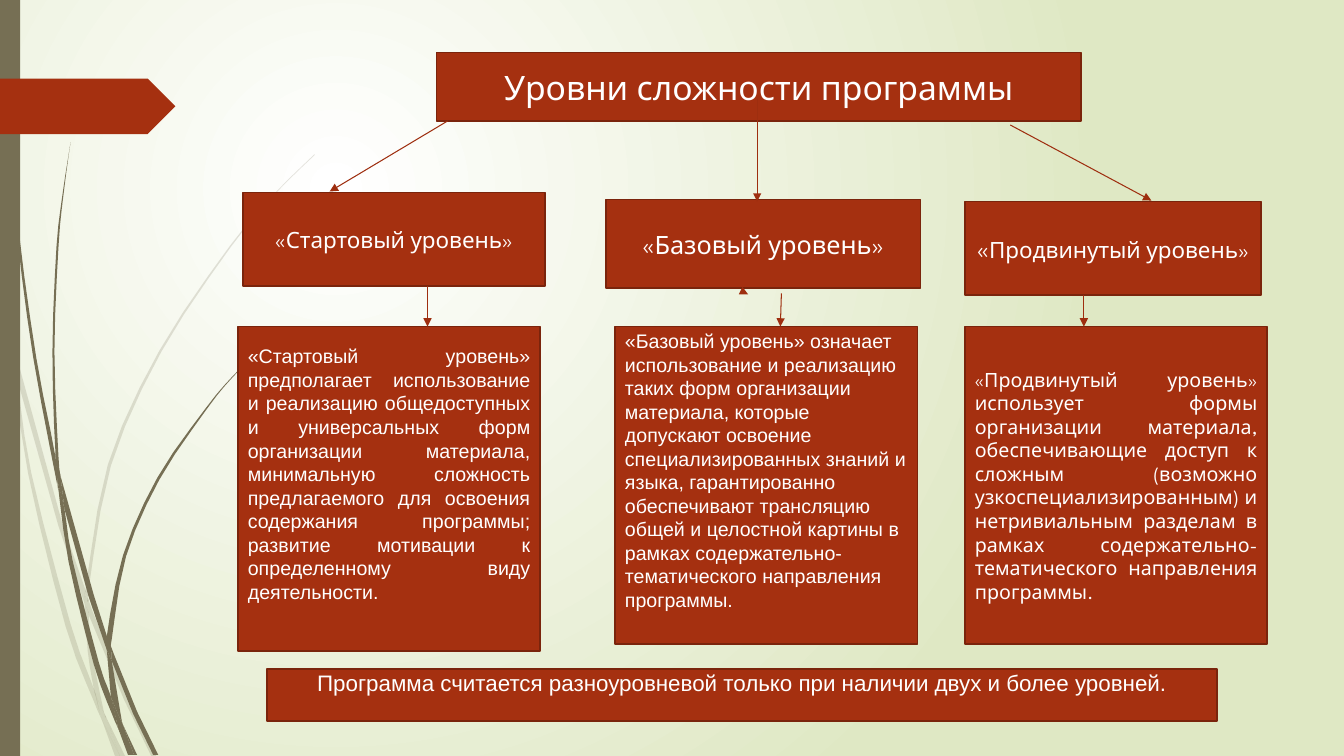
"""Builds a slide on the difficulty levels of a programme."""
from dataclasses import dataclass
from typing import Optional

from lxml.etree import SubElement
from pptx import Presentation
from pptx.dml.color import RGBColor
from pptx.enum.shapes import MSO_CONNECTOR, MSO_SHAPE
from pptx.enum.text import MSO_ANCHOR, PP_ALIGN
from pptx.oxml.ns import qn
from pptx.util import Inches, Pt

COLORS = {"rust": "A53010", "edge": "7A240C", "arrow": "9E2E0F", "olive": "766F54",
          "white": "FFFFFF", "meadow": "DFE8C4"}
DISPLAY, BODY = "League Spartan", "Arial"
UNITS_PER_INCH = 1000
Point = tuple[float, float]


@dataclass
class Panel:
    left: float
    top: float
    width: float
    height: float
    text: str
    size: int
    font: str = DISPLAY
    align: PP_ALIGN = PP_ALIGN.CENTER
    anchor: MSO_ANCHOR = MSO_ANCHOR.MIDDLE
    margin_top: float = 0.05
    margin_bottom: float = 0.05
    quote_size: Optional[int] = None


@dataclass
class Arrow:
    start: Point
    end: Point


@dataclass
class Blade:
    left_edge: list[Point]
    right_edge: list[Point]


FAINT_BLADES = [
    Blade([(0, 2.82), (0, 2.99), (0.1, 3.44), (0.11, 3.5)], [(0, 2.82), (0.09, 3.22), (0.11, 3.5)]),
    Blade([(0.14, 3.45), (0.17, 3.76), (0.58, 5.22), (0.84, 5.99)],
          [(0.14, 3.45), (0.62, 5.2), (0.85, 5.86), (0.84, 5.99)]),
    Blade([(0.88, 5.96), (0.88, 6.1), (1.23, 6.94), (1.5, 7.5)],
          [(0.88, 5.96), (0.92, 6.07), (1.27, 6.92), (1.55, 7.5)]),
    Blade([(1.05, 7.11), (1.19, 7.5)], [(1.05, 7.11), (1.24, 7.5)]),
    Blade([(0.11, 3.5), (0.28, 4.7), (0.65, 6.21), (0.92, 6.93), (1.01, 7.14)],
          [(0.11, 3.5), (0.17, 3.76), (0.31, 4.69), (0.7, 6.19), (0.93, 6.83), (0.99, 7.07), (1.01, 7.14)]),
    Blade([(0.84, 5.99), (0.87, 6.46), (0.93, 6.83), (0.96, 6.92), (1.05, 7.11)],
          [(0.84, 5.99), (0.88, 6.08), (0.88, 6.1), (0.91, 6.46), (1.03, 7.06), (1.05, 7.11)]),
    Blade([(3.12, 1.53), (2.89, 1.75), (2.68, 1.97), (2.28, 2.44), (1.58, 3.48), (1.07, 4.61), (0.85, 5.84),
           (0.85, 5.86), (0.88, 5.96)],
          [(3.12, 1.54), (2.9, 1.75), (2.68, 1.98), (2.29, 2.45), (1.6, 3.49), (1.1, 4.62), (0.88, 5.84),
           (0.88, 5.96)]),
    Blade([(1.01, 7.14), (1.14, 7.5)], [(1.01, 7.14), (1.19, 7.5)]),
    Blade([(0.85, 5.86), (0.84, 5.99), (0.88, 6.08)], [(0.85, 5.86), (0.88, 5.96), (0.88, 6.1)]),
    Blade([(0.93, 6.83), (0.99, 7.07), (1.01, 7.14), (1.19, 7.5)],
          [(0.93, 6.83), (0.96, 6.92), (1.05, 7.11), (1.19, 7.5)]),
]
SOLID_BLADES = [
    Blade([(0.03, 0), (0.04, 0.48), (0.07, 1.1), (0.17, 2.33), (0.33, 3.55), (0.56, 4.77), (0.57, 4.81)],
          [(0.04, 0), (0.05, 0.48), (0.08, 1.09), (0.19, 2.32), (0.36, 3.55), (0.55, 4.53), (0.57, 4.81)]),
    Blade([(0.6, 4.72), (0.64, 5.05), (0.88, 5.92), (1.06, 6.45)],
          [(0.6, 4.72), (0.93, 5.9), (1.06, 6.31), (1.06, 6.45)]),
    Blade([(1.1, 6.41), (1.11, 6.56), (1.32, 7.08), (1.52, 7.49)],
          [(1.1, 6.41), (1.13, 6.49), (1.36, 7.06), (1.57, 7.49)]),
    Blade([(0.57, 4.77), (0.68, 5.57), (0.93, 6.59), (1.11, 7.08), (1.17, 7.22)],
          [(0.57, 4.77), (0.64, 5.05), (0.72, 5.56), (0.98, 6.57), (1.1, 6.91), (1.17, 7.22)]),
    Blade([(0.7, 1.41), (0.62, 1.93), (0.56, 2.45), (0.52, 3.49), (0.55, 4.49), (0.6, 4.72)],
          [(0.7, 1.41), (0.63, 1.93), (0.58, 2.45), (0.54, 3.49), (0.58, 4.53), (0.6, 4.72)]),
    Blade([(1.22, 7.19), (1.33, 7.49)], [(1.22, 7.19), (1.36, 7.49)]),
    Blade([(0.55, 4.49), (0.55, 4.53), (0.57, 4.77), (0.64, 5.05)], [(0.55, 4.49), (0.6, 4.72), (0.64, 5.05)]),
    Blade([(2.6, 3.44), (2.31, 3.73), (2.04, 4.05), (1.56, 4.74), (1.22, 5.51), (1.06, 6.31), (1.1, 6.41)],
          [(2.61, 3.44), (2.31, 3.74), (2.05, 4.06), (1.58, 4.76), (1.25, 5.52), (1.11, 6.33), (1.1, 6.41)]),
    Blade([(1.17, 7.22), (1.27, 7.49)], [(1.17, 7.22), (1.31, 7.49)]),
    Blade([(1.06, 6.45), (1.1, 6.91), (1.16, 7.06), (1.22, 7.19)],
          [(1.06, 6.45), (1.11, 6.56), (1.21, 7.16), (1.22, 7.19)]),
    Blade([(1.06, 6.31), (1.06, 6.45), (1.11, 6.56)], [(1.06, 6.31), (1.1, 6.41), (1.11, 6.56)]),
    Blade([(1.1, 6.91), (1.16, 7.17), (1.17, 7.22), (1.3, 7.49)],
          [(1.1, 6.91), (1.16, 7.06), (1.22, 7.19), (1.33, 7.49)]),
]
PANELS = [
    Panel(4.33, 0.52, 6.39, 0.68, "Уровни сложности программы", 24),
    Panel(2.41, 1.91, 3, 0.93, "«Стартовый уровень»", 16),
    Panel(6.01, 1.98, 3.12, 0.88, "«Базовый уровень»", 18),
    Panel(9.57, 2, 2.94, 0.93, "«Продвинутый уровень»", 16, quote_size=18),
    Panel(2.36, 3.24, 3, 3.22,
          "«Стартовый уровень» предполагает использование и реализацию общедоступных и "
          "универсальных форм организации материала, минимальную сложность предлагаемого для "
          "освоения содержания программы; развитие мотивации к определенному виду деятельности.",
          14, BODY, PP_ALIGN.JUSTIFY, margin_bottom=0.35),
    Panel(6.1, 3.24, 3, 3.15,
          "«Базовый уровень» означает использование и реализацию таких форм организации материала, "
          "которые допускают освоение специализированных знаний и языка, гарантированно обеспечивают "
          "трансляцию общей и целостной картины в рамках содержательно-тематического направления программы.",
          14, BODY, PP_ALIGN.LEFT, margin_bottom=0.35),
    Panel(9.57, 3.24, 3, 3.15,
          "«Продвинутый уровень» использует формы организации материала, обеспечивающие доступ к "
          "сложным (возможно узкоспециализированным) и нетривиальным разделам в рамках "
          "содержательно-тематического направления программы.", 14, align=PP_ALIGN.JUSTIFY),
    Panel(2.65, 6.64, 9.42, 0.51, "Программа считается разноуровневой только при наличии двух и более уровней.",
          16, BODY, anchor=MSO_ANCHOR.TOP, margin_top=0),
]
ARROWS = [
    Arrow((4.44, 1.2), (3.27, 1.9)), Arrow((7.51, 0.98), (7.51, 2)), Arrow((10.02, 1.24), (11.42, 1.99)),
    Arrow((4.24, 2.84), (4.24, 3.24)), Arrow((7.4, 2.91), (7.42, 2.92)),
    Arrow((10.75, 2.93), (10.75, 3.24)), Arrow((7.75, 2.91), (7.74, 3.24)),
]


def rgb(name: str) -> RGBColor:
    return RGBColor.from_string(COLORS[name])


def paint(shape, fill: str, edge: Optional[str] = None) -> None:
    shape.shadow.inherit = False
    shape.fill.solid()
    shape.fill.fore_color.rgb = rgb(fill)
    if edge:
        shape.line.color.rgb = rgb(edge)
        shape.line.width = Pt(1.25)
    else:
        shape.line.fill.background()


def smooth(knots: list[Point]) -> list[Point]:
    steps = 3 if len(knots) > 4 else 1
    padded = [knots[0], *knots, knots[-1]]
    curve = [tuple(b + ((c - a) * t + (2 * a - 5 * b + 4 * c - d) * t ** 2 + (3 * b - a - 3 * c + d) * t ** 3) / 2
                   for a, b, c, d in zip(*window))
             for window in zip(padded, padded[1:], padded[2:], padded[3:])
             for t in (step / steps for step in range(steps))]
    return curve + [knots[-1]]


def draw_blade(slide, blade: Blade, opacity: int) -> None:
    outline = [(x * UNITS_PER_INCH, y * UNITS_PER_INCH)
               for x, y in smooth(blade.left_edge) + smooth(blade.right_edge)[::-1]]
    builder = slide.shapes.build_freeform(*outline[0], scale=Inches(1) / UNITS_PER_INCH)
    builder.add_line_segments(outline[1:], close=True)
    leaf = builder.convert_to_shape()
    paint(leaf, "olive")
    if opacity < 100:
        SubElement(leaf._element.spPr.find(qn("a:solidFill"))[0], qn("a:alpha"), val=str(opacity * 1000))


def draw_panel(slide, panel: Panel) -> None:
    box = slide.shapes.add_shape(MSO_SHAPE.RECTANGLE, Inches(panel.left), Inches(panel.top),
                                 Inches(panel.width), Inches(panel.height))
    paint(box, "rust", "edge")
    frame = box.text_frame
    frame.word_wrap = True
    frame.vertical_anchor = panel.anchor
    frame.margin_top, frame.margin_bottom = Inches(panel.margin_top), Inches(panel.margin_bottom)
    paragraph = frame.paragraphs[0]
    paragraph.alignment = panel.align
    paragraph.text = panel.text
    if panel.quote_size:
        paragraph.text = panel.text[0]
        paragraph.add_run().text = panel.text[1:]
    for run in paragraph.runs:
        run.font.name, run.font.size = panel.font, Pt(panel.size)
        run.font.color.rgb = rgb("white")
    if panel.quote_size:
        paragraph.runs[0].font.size = Pt(panel.quote_size)


def draw_arrow(slide, arrow: Arrow) -> None:
    ends = [Inches(value) for value in (*arrow.start, *arrow.end)]
    link = slide.shapes.add_connector(MSO_CONNECTOR.STRAIGHT, *ends)
    link.line.color.rgb = rgb("arrow")
    link.line.width = Pt(0.75)
    SubElement(link.line._get_or_add_ln(), qn("a:tailEnd"), type="triangle")
    SubElement(link._element.spPr, qn("a:effectLst"))


def paint_background(slide) -> None:
    fill = slide.background.fill
    fill.gradient()
    for stop, name in zip(fill.gradient_stops, ("white", "meadow")):
        stop.color.rgb = rgb(name)
    gradient = next(slide._element.iter(qn("a:gradFill")))
    gradient.remove(gradient.find(qn("a:lin")))
    glow = SubElement(gradient, qn("a:path"), path="circle")
    SubElement(glow, qn("a:fillToRect"), l="50000", t="50000", r="100000", b="100000")


deck = Presentation()
deck.slide_width, deck.slide_height = Inches(13.33), Inches(7.5)
level_slide = deck.slides.add_slide(deck.slide_layouts[6])
paint_background(level_slide)
for blades, blade_opacity in ((FAINT_BLADES, 20), (SOLID_BLADES, 100)):
    for each_blade in blades:
        draw_blade(level_slide, each_blade, blade_opacity)
side_bar = level_slide.shapes.add_shape(MSO_SHAPE.RECTANGLE, 0, 0, Inches(0.2), Inches(7.5))
paint(side_bar, "olive")
tag = level_slide.shapes.add_shape(MSO_SHAPE.PENTAGON, 0, Inches(0.78), Inches(1.74), Inches(0.55))
paint(tag, "rust")
for each_panel in PANELS:
    draw_panel(level_slide, each_panel)
for each_arrow in ARROWS:
    draw_arrow(level_slide, each_arrow)
deck.save("out.pptx")
